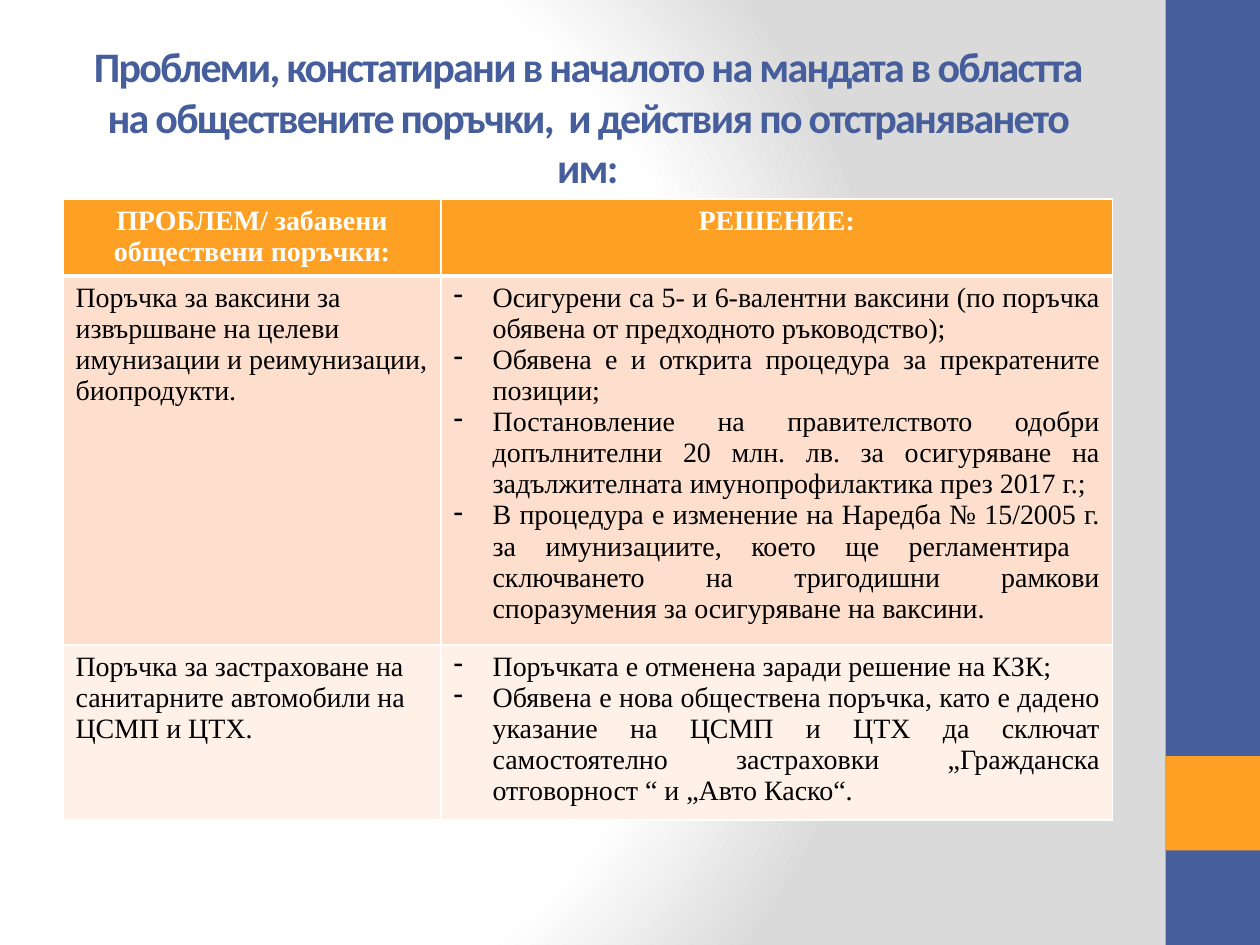
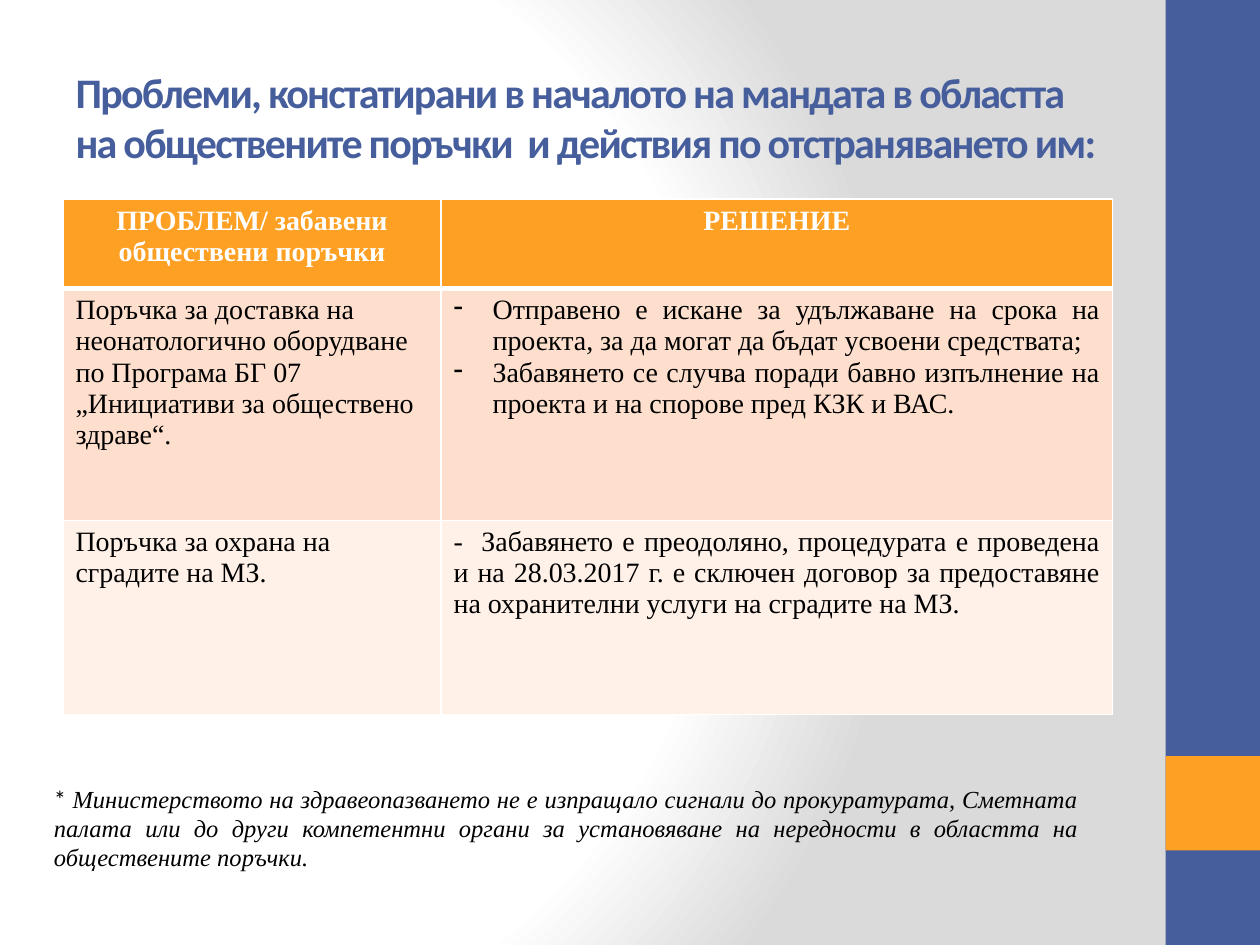
from dataclasses import dataclass

from lxml.etree import SubElement
from pptx import Presentation
from pptx.dml.color import RGBColor
from pptx.enum.shapes import MSO_SHAPE
from pptx.enum.text import MSO_ANCHOR, MSO_AUTO_SIZE, PP_ALIGN
from pptx.oxml import parse_xml
from pptx.oxml.ns import nsdecls, qn
from pptx.util import Inches, Pt

# Content: a string in the solution column is plain text, a list is dashed items
PAGES = [
    {
        "title": "Проблеми, констатирани в началото на мандата в областта на обществените "
                 "поръчки,  и действия по отстраняването им:",
        "title_align": PP_ALIGN.CENTER,
        "row_heights": (0.61, 2.93, 1.39),
        "header": ("ПРОБЛЕМ/ забавени обществени поръчки:", "РЕШЕНИЕ:"),
        "rows": [
            ("Поръчка за ваксини за извършване на целеви имунизации и реимунизации, "
             "биопродукти.",
             ["Осигурени са 5- и 6-валентни ваксини (по поръчка обявена от предходното "
              "ръководство);",
              "Обявена е и открита процедура за прекратените позиции;",
              "Постановление на правителството одобри допълнителни 20 млн. лв. за "
              "осигуряване на задължителната имунопрофилактика през 2017 г.;",
              "В процедура е изменение на Наредба № 15/2005 г. за имунизациите, което ще "
              "регламентира  сключването на тригодишни рамкови споразумения за "
              "осигуряване на ваксини."]),
            ("Поръчка за застраховане на санитарните автомобили на ЦСМП и ЦТХ.",
             ["Поръчката е отменена заради решение на КЗК;",
              "Обявена е нова обществена поръчка, като е дадено указание на ЦСМП и ЦТХ да "
              "сключат самостоятелно застраховки „Гражданска отговорност “ и „Авто "
              "Каско“."]),
        ],
    },
    {
        "title": "Проблеми, констатирани в началото на мандата в областта на обществените "
                 "поръчки  и действия по отстраняването им:",
        "title_align": PP_ALIGN.LEFT,
        "row_heights": (0.71, 1.84, 1.54),
        "header": ("ПРОБЛЕМ/ забавени обществени поръчки", "РЕШЕНИЕ"),
        "rows": [
            ("Поръчка за доставка на неонатологично оборудване по Програма БГ 07 "
             "„Инициативи за обществено здраве“.",
             ["Отправено е искане за удължаване на срока на проекта, за да могат да бъдат "
              "усвоени средствата;",
              "Забавянето се случва поради бавно изпълнение на проекта и на спорове пред "
              "КЗК и ВАС."]),
            ("Поръчка за охрана на сградите на МЗ.",
             "-  Забавянето е преодоляно, процедурата е проведена и на 28.03.2017 г. е "
             "сключен договор за предоставяне на охранителни услуги на сградите на МЗ."),
        ],
        "footnote": "Министерството на здравеопазването не е изпращало сигнали до "
                    "прокуратурата, Сметната палата или до други компетентни органи за "
                    "установяване на нередности в областта на обществените поръчки.",
    },
]


# Theme
@dataclass(frozen=True)
class Theme:
    blue: str = "465E9C"
    orange: str = "FDA023"
    white: str = "FFFFFF"
    black: str = "000000"
    grey: str = "DADADA"
    row_fills: tuple = ("FEDFCD", "FFF0E8")
    heading_font: str = "Calibri"
    body_font: str = "Times New Roman"
    title_size: int = 24
    table_size: int = 16
    note_size: int = 14


THEME = Theme()
TITLE_STYLE = {"name": THEME.heading_font, "size": Pt(THEME.title_size), "bold": True,
               "color": THEME.blue}
HEADER_STYLE = {"name": THEME.body_font, "size": Pt(THEME.table_size), "bold": True,
                "color": THEME.white}
BODY_STYLE = {**HEADER_STYLE, "bold": False, "color": THEME.black}
MARK_STYLE = {"name": THEME.heading_font, "size": Pt(THEME.note_size),
              "color": THEME.black}
NOTE_STYLE = {**MARK_STYLE, "name": THEME.body_font, "italic": True}

# Layout in inches
PAGE_WIDTH, PAGE_HEIGHT = 10, 7.5
BAND = 0.75
CONTENT_LEFT, CONTENT_WIDTH = 0.5, 8.33
TITLE_TOP, TITLE_HEIGHT = 0.3, 1.25
TABLE_TOP = 1.58
COLUMN_WIDTHS = (3, 5.33)
NOTE_BOX = (0.33, 6.17, CONTENT_WIDTH, 0.81)
DASH_INDENT = 0.31


def add_span(para, text, style):
    span = para.add_run()
    span.text = text
    for name, value in style.items():
        if name == "color":
            span.font.color.rgb = RGBColor.from_string(value)
        else:
            setattr(span.font, name, value)
    return span


def add_dash(para):
    properties = para._p.get_or_add_pPr()
    properties.set("marL", str(Inches(DASH_INDENT)))
    properties.set("indent", str(-Inches(DASH_INDENT)))
    SubElement(properties, qn("a:buFontTx"))
    SubElement(properties, qn("a:buChar")).set("char", "-")


# Shared background and side bands
def style_master(deck, first_page):
    master = deck.slide_master
    master.background.fill.solid()
    properties = master.element.find(".//" + qn("p:bgPr"))
    stops = "".join(
        f'<a:gs pos="{position * 1000}"><a:srgbClr val="{color}"/></a:gs>'
        for position, color in ((0, THEME.white), (75, THEME.white), (100, THEME.grey)))
    properties.replace(properties[0], parse_xml(
        f'<a:gradFill {nsdecls("a")} rotWithShape="1"><a:gsLst>{stops}</a:gsLst>'
        '<a:path path="circle"><a:fillToRect l="20000" t="50000" r="100000" b="50000"/>'
        '</a:path></a:gradFill>'))
    bands = ((0, PAGE_HEIGHT, THEME.blue), (6, BAND, THEME.orange))
    for position, (top, height, color) in enumerate(bands, start=2):
        band = first_page.shapes.add_shape(
            MSO_SHAPE.RECTANGLE, Inches(PAGE_WIDTH - BAND), Inches(top),
            Inches(BAND), Inches(height))
        band.shadow.inherit = False
        band.fill.solid()
        band.fill.fore_color.rgb = RGBColor.from_string(color)
        band.line.fill.background()
        master.shapes.element.insert(position, band.element)


def set_title(page, text, align):
    title = page.shapes.title
    title.left, title.top = Inches(CONTENT_LEFT), Inches(TITLE_TOP)
    title.width, title.height = Inches(CONTENT_WIDTH), Inches(TITLE_HEIGHT)
    frame = title.text_frame
    frame.auto_size = MSO_AUTO_SIZE.NONE
    frame.word_wrap = True
    frame.vertical_anchor = MSO_ANCHOR.MIDDLE
    para = frame.paragraphs[0]
    para.alignment = align
    span = add_span(para, text, TITLE_STYLE)
    span.font._element.set("spc", "-100")


# Table
def set_borders(cell, widths):
    properties = cell._tc.get_or_add_tcPr()
    for position, (side, width) in enumerate(widths.items()):
        properties.insert(position, parse_xml(
            f'<a:ln{side} {nsdecls("a")} w="{Pt(width)}"><a:solidFill>'
            f'<a:srgbClr val="{THEME.white}"/></a:solidFill></a:ln{side}>'))


def fill_cell(cell, content, style, align, fill):
    cell.fill.solid()
    cell.fill.fore_color.rgb = RGBColor.from_string(fill)
    dashed = isinstance(content, list)
    for index, text in enumerate(content if dashed else [content]):
        frame = cell.text_frame
        para = frame.add_paragraph() if index else frame.paragraphs[0]
        para.alignment = align
        if dashed:
            add_dash(para)
        add_span(para, text, style)


def add_problem_table(page, header, rows, row_heights):
    table = page.shapes.add_table(
        len(rows) + 1, len(COLUMN_WIDTHS), Inches(CONTENT_LEFT), Inches(TABLE_TOP),
        Inches(CONTENT_WIDTH), Inches(sum(row_heights))).table
    for column, width in zip(table.columns, COLUMN_WIDTHS):
        column.width = Inches(width)
    for row, height in zip(table.rows, row_heights):
        row.height = Inches(height)
    for row_index, contents in enumerate([header, *rows]):
        for column_index, content in enumerate(contents):
            cell = table.cell(row_index, column_index)
            if row_index == 0:
                fill_cell(cell, content, HEADER_STYLE, PP_ALIGN.CENTER, THEME.orange)
            else:
                align = PP_ALIGN.JUSTIFY if column_index else PP_ALIGN.LEFT
                fill_cell(cell, content, BODY_STYLE, align, THEME.row_fills[row_index - 1])
            set_borders(cell, {"L": 1, "R": 1, "T": 3 if row_index == 1 else 1,
                               "B": 3 if row_index == 0 else 1})


def add_footnote(page, text):
    box = page.shapes.add_textbox(*map(Inches, NOTE_BOX))
    frame = box.text_frame
    frame.word_wrap = True
    frame.auto_size = MSO_AUTO_SIZE.SHAPE_TO_FIT_TEXT
    para = frame.paragraphs[0]
    para.alignment = PP_ALIGN.JUSTIFY
    add_span(para, "* ", MARK_STYLE)
    add_span(para, text, NOTE_STYLE)


# Deck
def main():
    deck = Presentation()
    deck.slide_width, deck.slide_height = Inches(PAGE_WIDTH), Inches(PAGE_HEIGHT)
    title_only = deck.slide_layouts.get_by_name("Title Only")
    for index, content in enumerate(PAGES):
        page = deck.slides.add_slide(title_only)
        if index == 0:
            style_master(deck, page)
        set_title(page, content["title"], content["title_align"])
        add_problem_table(page, content["header"], content["rows"], content["row_heights"])
        if "footnote" in content:
            add_footnote(page, content["footnote"])
    deck.save("out.pptx")


if __name__ == "__main__":
    main()
